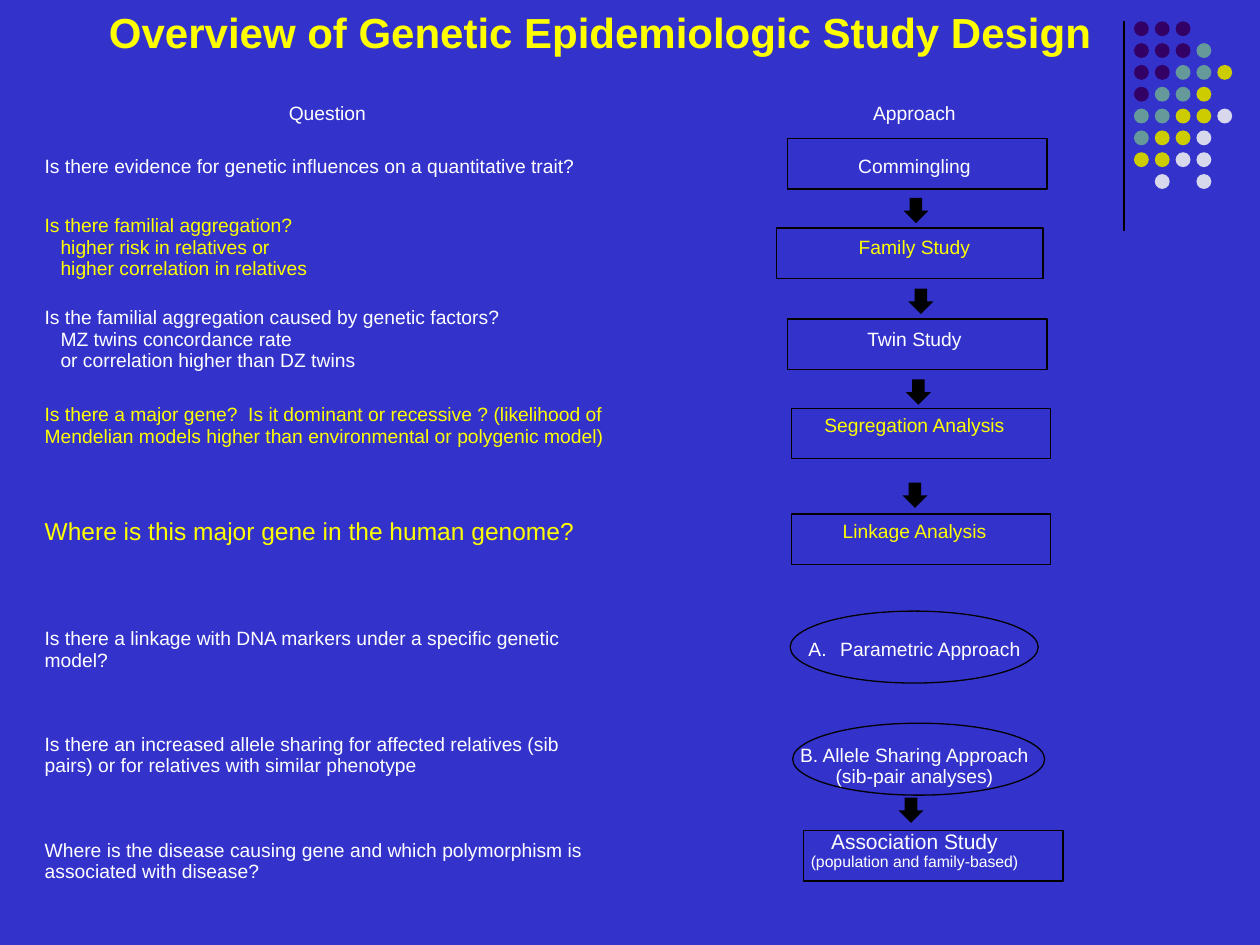
from lxml import etree
from pptx import Presentation
from pptx.dml.color import RGBColor
from pptx.enum.shapes import MSO_CONNECTOR as Link, MSO_SHAPE as Shape
from pptx.enum.text import MSO_ANCHOR as Anchor, PP_ALIGN as Align
from pptx.oxml.ns import qn
from pptx.util import Cm, Pt

BLUE, BLACK, WHITE, YELLOW = "3333CC", "000000", "FFFFFF", "FFFF00"
DOT_COLOURS = {"P": "330066", "T": "669999", "Y": "CCCC00", "W": "D8D8EC"}
DOT_ROWS = ["PPP", "PPPT", "PPTTY", "PTTY", "TTYYW", "TYYW", "YYWW", " W W"]
NO_STYLE = "{2D5ABB26-0587-4C30-8999-92F81FD0307C}"
INDENT = 0.32

# One row each: height, question lines, approach lines, colour, question size
ROWS = [
    (0.81, ["Question"], ["Approach"], WHITE, 11),
    (1.35, ["Is there evidence for genetic influences on a quantitative trait?"],
     ["Commingling"], WHITE, 11),
    (1.9, ["Is there familial aggregation?", "higher risk in relatives or",
           "higher correlation in relatives"], ["Family Study"], YELLOW, 11),
    (1.8, ["Is the familial aggregation caused by genetic factors?",
           "MZ twins concordance rate", "or correlation higher than DZ twins"],
     ["Twin Study"], WHITE, 11),
    (1.68, ["Is there a major gene?  Is it dominant or recessive ? (likelihood of "
            "Mendelian models higher than environmental or polygenic model)"],
     ["Segregation Analysis"], YELLOW, 11),
    (2.62, ["Where is this major gene in the human genome?"],
     ["Linkage Analysis"], YELLOW, 14),
    (2.11, ["Is there a linkage with DNA markers under a specific genetic model?"],
     ["Parametric Approach"], WHITE, 11),
    (2.16, ["Is there an increased allele sharing for affected relatives (sib pairs) "
            "or for relatives with similar phenotype"],
     ["B. Allele Sharing Approach", "(sib-pair analyses)"], WHITE, 11),
    (2.11, ["Where is the disease causing gene and which polymorphism is "
            "associated with disease?"],
     ["Association Study", "(population and family-based)"], WHITE, 11),
]
TOP_ROW, COLUMNS = 0.46, (11.58, 12.09, 0.23)

ARROWS = [(18.21, 3.99), (18.31, 5.82), (18.26, 7.65), (18.19, 9.73), (18.11, 16.08)]
BOXES = [(15.88, 2.79, 5.23), (15.65, 4.6, 5.38), (15.88, 6.43, 5.23),
         (15.95, 8.23, 5.23), (15.95, 10.36, 5.23), (16.2, 16.74, 5.23)]
OVALS = [(15.93, 12.32, 5.0), (15.98, 14.58, 5.08)]


def colour(code):
    return RGBColor.from_string(code)


class StudySlide:
    font = "Arial"
    line_width = Pt(0.75)

    def __init__(self, page):
        self.page = page
        page.background.fill.solid()
        page.background.fill.fore_color.rgb = colour(BLUE)

    def add_span(self, para, text, size, code, bold=False, align=Align.LEFT):
        para.alignment = align
        span = para.add_run()
        span.text = text
        span.font.name, span.font.size, span.font.bold = self.font, Pt(size), bold
        span.font.color.rgb = colour(code)

    def title(self, text, left, top, width, height):
        box = self.page.shapes.add_textbox(Cm(left), Cm(top), Cm(width), Cm(height))
        box.text_frame.word_wrap = True
        self.add_span(box.text_frame.paragraphs[0], text, 24, YELLOW, True, Align.CENTER)

    def shape(self, kind, left, top, width, height, fill=None):
        item = self.page.shapes.add_shape(kind, Cm(left), Cm(top), Cm(width), Cm(height))
        item.shadow.inherit = False
        if fill:
            item.fill.solid()
            item.fill.fore_color.rgb = colour(fill)
            item.line.fill.background()
        else:
            item.fill.background()
            item.line.color.rgb = colour(BLACK)
            item.line.width = self.line_width

    def line(self, x1, y1, x2, y2):
        rule = self.page.shapes.add_connector(Link.STRAIGHT, Cm(x1), Cm(y1), Cm(x2), Cm(y2))
        rule.line.color.rgb = colour(BLACK)
        rule.line.width = self.line_width
        etree.SubElement(rule._element.spPr, qn("a:effectLst"))

    def table(self, left, top, widths, heights):
        frame = self.page.shapes.add_table(len(heights), len(widths), Cm(left), Cm(top),
                                           Cm(sum(widths)), Cm(sum(heights)))
        grid = frame.table
        grid.first_row = grid.horz_banding = False
        frame._element.find(".//" + qn("a:tableStyleId")).text = NO_STYLE
        for column, width in zip(grid.columns, widths):
            column.width = Cm(width)
        for row, height in zip(grid.rows, heights):
            row.height = Cm(height)
        for cell in grid.iter_cells():
            cell.fill.background()
            cell.vertical_anchor = Anchor.MIDDLE
            cell.margin_left = cell.margin_right = Cm(0.09)
            cell.margin_top = cell.margin_bottom = 0
            # Small end mark keeps empty cells from stretching their row
            etree.SubElement(cell.text_frame.paragraphs[0]._p, qn("a:endParaRPr"), sz="800")
        grid.cell(0, 0).merge(grid.cell(0, len(widths) - 1))
        return grid

    def cell_text(self, cell, lines, sizes, code, align=Align.LEFT, indent=0):
        frame = cell.text_frame
        for index, (text, size) in enumerate(zip(lines, sizes)):
            para = frame.add_paragraph() if index else frame.paragraphs[0]
            self.add_span(para, text, size, code, align=align)
            if index and indent:
                para._p.get_or_add_pPr().set("marL", str(Cm(indent)))

    def letter(self, cell):
        props = cell.text_frame.paragraphs[0]._p.get_or_add_pPr()
        props.set("marL", str(Cm(0.64)))
        props.set("indent", str(Cm(-0.64)))
        etree.SubElement(props, qn("a:buFont"), typeface=self.font)
        etree.SubElement(props, qn("a:buAutoNum"), type="alphaUcPeriod")


def main():
    deck = Presentation()
    deck.slide_width, deck.slide_height = Cm(25.4), Cm(19.05)
    slide = StudySlide(deck.slides.add_slide(deck.slide_layouts[6]))

    # Corner ornament
    slide.line(22.66, 0.43, 22.66, 4.65)
    for row, marks in enumerate(DOT_ROWS):
        for column, mark in enumerate(marks):
            if mark in DOT_COLOURS:
                slide.shape(Shape.OVAL, 22.86 + 0.42 * column, 0.43 + 0.44 * row,
                            0.3, 0.3, DOT_COLOURS[mark])

    # Questions and approaches
    grid = slide.table(0.81, 1.42, COLUMNS, [TOP_ROW] + [row[0] for row in ROWS])
    for index, (_, question, approach, code, size) in enumerate(ROWS, 1):
        align = Align.CENTER if index == 1 else Align.LEFT
        sizes = (12, 9) if index == len(ROWS) else (11, 11)
        slide.cell_text(grid.cell(index, 0), question, [size] * len(question),
                        code, align, INDENT)
        slide.cell_text(grid.cell(index, 1), approach, sizes, code, Align.CENTER)
    slide.letter(grid.cell(7, 1))
    grid.cell(8, 1).margin_top = Cm(0.43)
    grid.cell(9, 1).margin_bottom = Cm(0.43)

    # Title
    slide.title("Overview of Genetic Epidemiologic Study Design", -0.31, 0, 24.82, 2.31)

    # Flow of approaches
    for left, top in ARROWS:
        slide.shape(Shape.DOWN_ARROW, left, top, 0.51, 0.51, BLACK)
    for left, top, width in BOXES:
        slide.shape(Shape.RECTANGLE, left, top, width, 1.02)
    for left, top, width in OVALS:
        slide.shape(Shape.OVAL, left, top, width, 1.45)

    deck.save("out.pptx")


if __name__ == "__main__":
    main()
